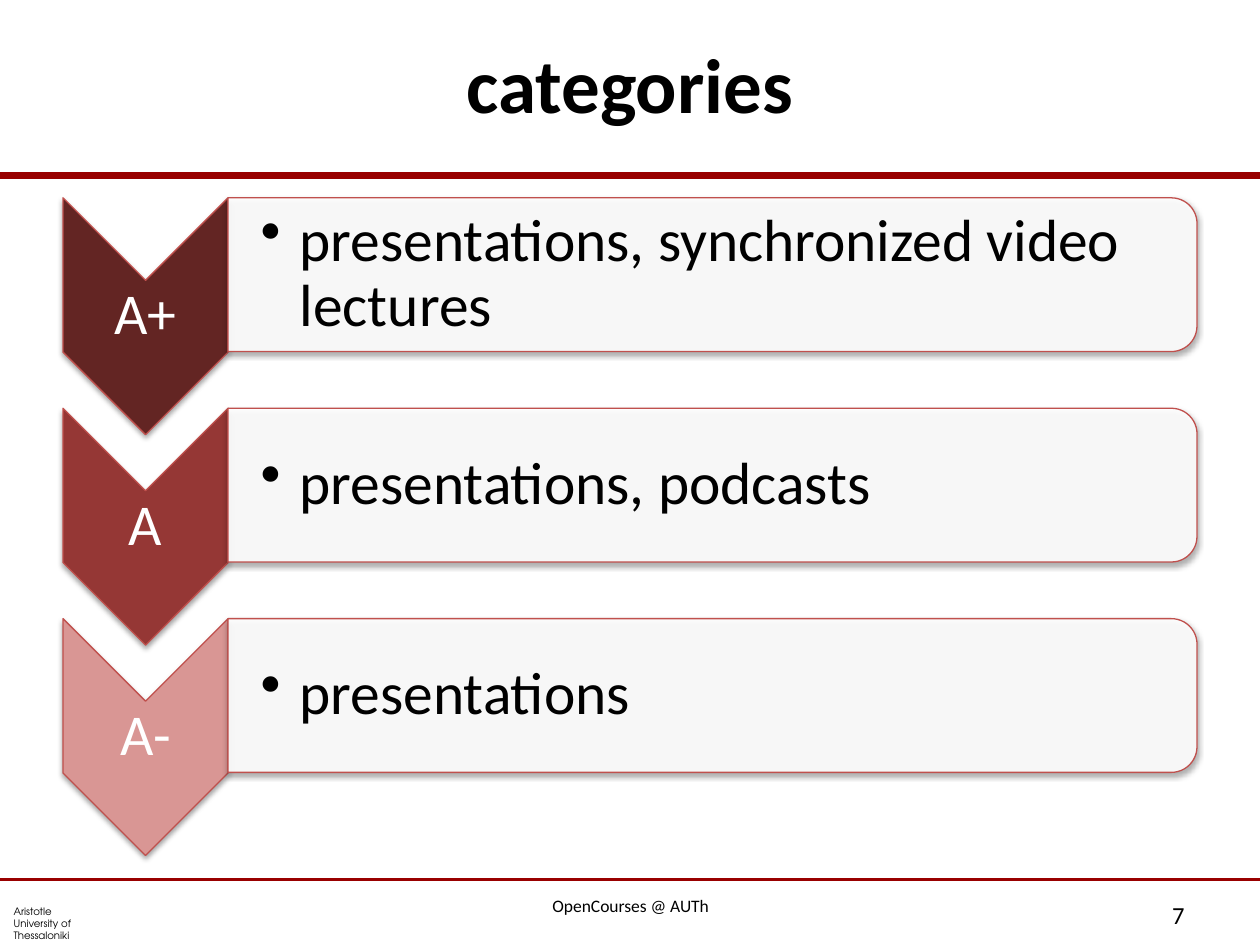
import pptx
import pptx.dml.color
import pptx.enum.shapes
import pptx.enum.text
import pptx.oxml.ns
import pptx.util
from lxml import etree

Inches = pptx.util.Inches
Pt = pptx.util.Pt
SHAPE = pptx.enum.shapes.MSO_SHAPE
ALIGN = pptx.enum.text.PP_ALIGN
ANCHOR = pptx.enum.text.MSO_ANCHOR
qn = pptx.oxml.ns.qn

COLORS = {
    "rule": "990000",
    "outline": "C0504D",
    "text": "000000",
    "white": "FFFFFF",
    "shadow": "000000",
}
CATEGORIES = [
    ("A+", "presentations, synchronized video lectures", "632523"),
    ("A", "presentations, podcasts", "953735"),
    ("A-", "presentations", "D99694"),
]
FIRST_ROW_TOP = 1.57
ROW_PITCH = 1.67
CHEVRON_LEFT, CHEVRON_WIDTH, CHEVRON_HEIGHT = 0.5, 1.31, 1.88
PANEL_LEFT, PANEL_WIDTH, PANEL_HEIGHT = 1.81, 7.69, 1.22


def rgb(value):
    return pptx.dml.color.RGBColor.from_string(value)


def add_rule(slide, y, weight):
    rule = slide.shapes.add_connector(
        pptx.enum.shapes.MSO_CONNECTOR.STRAIGHT,
        Inches(0), Inches(y), Inches(10), Inches(y))
    rule.line.color.rgb = rgb(COLORS["rule"])
    rule.line.width = Pt(weight)
    etree.SubElement(rule._element.spPr, qn("a:effectLst"))


def format_text(frame, text, size, color=COLORS["text"], align=ALIGN.LEFT,
                anchor=ANCHOR.MIDDLE, insets=(0.1, 0.05, 0.1, 0.05),
                font="Calibri", bold=False):
    frame.word_wrap = True
    frame.vertical_anchor = anchor
    (frame.margin_left, frame.margin_top,
     frame.margin_right, frame.margin_bottom) = map(Inches, insets)
    paragraph = frame.paragraphs[0]
    paragraph.text = text
    paragraph.alignment = align
    paragraph.font.name = font
    paragraph.font.size = Pt(size)
    paragraph.font.bold = bold
    paragraph.font.color.rgb = rgb(color)
    return paragraph


def add_label(slide, box, text, size, **style):
    label = slide.shapes.add_textbox(*map(Inches, box))
    return format_text(label.text_frame, text, size, **style)


def add_bullet(paragraph, indent):
    properties = paragraph._p.get_or_add_pPr()
    properties.set("marL", str(Inches(indent)))
    properties.set("indent", str(-Inches(indent)))
    bullet = etree.Element(qn("a:buChar"), char="•")
    properties.insert_element_before(bullet, "a:tabLst", "a:defRPr", "a:extLst")


def add_soft_shadow(shape):
    shape.shadow.inherit = False
    effects = shape._element.spPr.find(qn("a:effectLst"))
    shadow = etree.SubElement(
        effects, qn("a:outerShdw"), blurRad=str(Pt(3.1)), dist=str(Pt(1.8)),
        dir="5400000", rotWithShape="0")
    color = etree.SubElement(shadow, qn("a:srgbClr"), val=COLORS["shadow"])
    etree.SubElement(color, qn("a:alpha"), val="35000")


def add_turned_shape(slide, preset, left, top, width, height, fill):
    """Add a shape turned by 90 degrees that fills the given visible box."""
    shift = (width - height) / 2
    shape = slide.shapes.add_shape(
        preset, Inches(left + shift), Inches(top - shift),
        Inches(height), Inches(width))
    shape.rotation = 90
    shape.fill.solid()
    shape.fill.fore_color.rgb = rgb(fill)
    shape.line.color.rgb = rgb(COLORS["outline"])
    shape.line.width = Pt(0.75)
    add_soft_shadow(shape)
    return shape


def set_opacity(shape, percent):
    color = shape._element.spPr.find(qn("a:solidFill")).find(qn("a:srgbClr"))
    etree.SubElement(color, qn("a:alpha"), val=str(percent * 1000))


def add_category(slide, top, grade, content, fill):
    add_turned_shape(slide, SHAPE.CHEVRON, CHEVRON_LEFT, top,
                     CHEVRON_WIDTH, CHEVRON_HEIGHT, fill)
    grade_line = add_label(
        slide, (CHEVRON_LEFT, top + 0.66, CHEVRON_WIDTH, 0.56), grade, 33,
        color=COLORS["white"], align=ALIGN.CENTER, insets=(0.02,) * 4)
    grade_line.line_spacing = 0.9

    panel = add_turned_shape(slide, SHAPE.ROUND_2_SAME_RECTANGLE, PANEL_LEFT,
                             top, PANEL_WIDTH, PANEL_HEIGHT, COLORS["white"])
    set_opacity(panel, 90)
    content_line = add_label(
        slide, (PANEL_LEFT, top + 0.06, PANEL_WIDTH - 0.06, 1.1), content, 34,
        insets=(0.26, 0.02, 0.02, 0.02))
    content_line.line_spacing = 0.9
    add_bullet(content_line, 0.31)


def add_title(slide, text):
    title = slide.shapes.title
    title.left, title.top = Inches(0.5), Inches(0.03)
    title.width, title.height = Inches(9), Inches(1.25)
    format_text(title.text_frame, text, 44, align=ALIGN.CENTER, bold=True)


def add_footer(slide):
    add_label(slide, (0.01, 7.16, 0.79, 0.34),
              "Aristotle University of Thessaloniki", 5.8,
              font="TeX Gyre Adventor")
    course = add_label(slide, (3.43, 6.9, 3.15, 0.6), "OpenCourses @ AUTh", 10,
                       align=ALIGN.CENTER, anchor=ANCHOR.TOP,
                       insets=(0.1, 0, 0.1, 0))
    course.line_spacing = 2.2
    add_label(slide, (7.17, 7.06, 2.33, 0.4), "7", 14, align=ALIGN.RIGHT)


def main():
    deck = pptx.Presentation()
    deck.slide_width, deck.slide_height = Inches(10), Inches(7.5)
    slide = deck.slides.add_slide(deck.slide_layouts[5])
    add_title(slide, "categories")
    add_rule(slide, 1.39, 4)
    add_rule(slide, 6.98, 2)
    for row, (grade, content, fill) in enumerate(CATEGORIES):
        add_category(slide, FIRST_ROW_TOP + row * ROW_PITCH,
                     grade, content, fill)
    add_footer(slide)
    deck.save("out.pptx")


if __name__ == "__main__":
    main()
